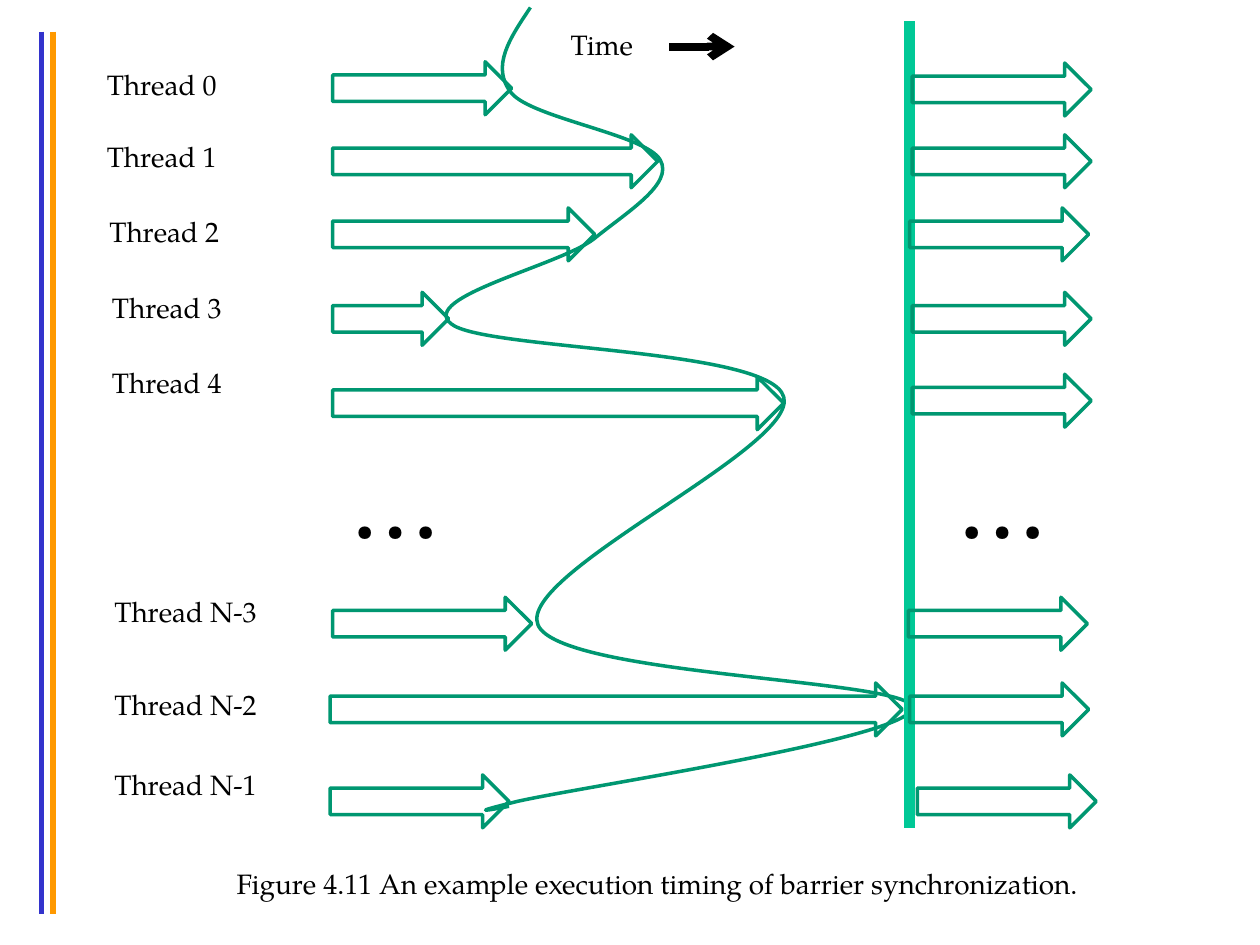
import dataclasses

import pptx
import pptx.dml.color
import pptx.enum.shapes
import pptx.enum.text
import pptx.oxml
import pptx.oxml.ns
import pptx.util
from pptx.util import Inches

FONT = "TeX Gyre Pagella"
GREEN = "009771"
BLACK = "000000"
ARROW_HEIGHT = 0.42
RESUME_WIDTH = 1.42
LABEL_HEIGHT = 0.4
UNITS_PER_INCH = 100

Point = tuple[float, float]


@dataclasses.dataclass
class Thread:
    name: str
    label_left: float
    label_top: float
    label_width: float
    work_left: float
    work_top: float
    work_width: float
    resume_left: float
    resume_top: float


@dataclasses.dataclass
class Line:
    start: Point
    end: Point
    color: str
    width: float
    arrowhead: bool = False


@dataclasses.dataclass
class Label:
    text: str
    left: float
    top: float
    width: float
    height: float = LABEL_HEIGHT
    size: float = 16


THREADS = [
    Thread("Thread 0", 0.75, 0.49, 1.11, 2.64, 0.49, 1.42, 7.24, 0.5),
    Thread("Thread 1", 0.75, 1.06, 1.11, 2.64, 1.07, 2.58, 7.24, 1.07),
    Thread("Thread 2", 0.77, 1.65, 1.11, 2.64, 1.65, 2.08, 7.22, 1.65),
    Thread("Thread 3", 0.79, 2.26, 1.11, 2.64, 2.32, 0.92, 7.24, 2.32),
    Thread("Thread 4", 0.79, 2.85, 1.11, 2.64, 2.99, 3.58, 7.24, 2.97),
    Thread("Thread N-3", 0.81, 4.67, 1.35, 2.64, 4.74, 1.58, 7.21, 4.74),
    Thread("Thread N-2", 0.81, 5.41, 1.35, 2.62, 5.42, 4.54, 7.22, 5.42),
    Thread("Thread N-1", 0.81, 6.04, 1.35, 2.62, 6.15, 1.42, 7.28, 6.15),
]

MARGIN_RULES = [
    Line((0.33, 0.25), (0.33, 7.25), "3333CC", 3),
    Line((0.42, 0.25), (0.42, 7.25), "FF9900", 3),
]
BARRIER = Line((7.22, 0.17), (7.22, 6.57), "00C896", 6)
TIME_ARROW = Line((5.31, 0.37), (5.83, 0.37), BLACK, 4.5, True)

LABELS = [
    Label("Time", 4.43, 0.17, 0.77),
    Label("…", 2.68, 3.4, 0.78, 1.11, 60),
    Label("…", 7.5, 3.4, 0.78, 1.11, 60),
    Label("Figure 4.11 An example execution timing of barrier synchronization.",
          1.78, 6.83, 7.07),
]

ARRIVAL_ORIGIN: Point = (3.54, 0.06)
ARRIVAL_SIZE: Point = (3.7, 6.37)
ARRIVAL_START: Point = (4.21, 0.06)
ARRIVAL_CURVES: list[tuple[Point, Point, Point]] = [
    ((4.05, 0.3), (3.89, 0.53), (4.06, 0.74)),
    ((4.23, 0.94), (5.13, 1.07), (5.24, 1.27)),
    ((5.35, 1.46), (4.98, 1.68), (4.71, 1.9)),
    ((4.43, 2.11), (3.32, 2.36), (3.58, 2.57)),
    ((3.83, 2.78), (6.11, 2.76), (6.22, 3.15)),
    ((6.34, 3.55), (4.1, 4.55), (4.27, 4.96)),
    ((4.44, 5.37), (7.26, 5.39), (7.24, 5.62)),
    ((7.21, 5.86), (4.64, 6.24), (4.11, 6.36)),
    ((3.58, 6.49), (4.04, 6.4), (4.04, 6.4)),
]


def rgb(color: str) -> pptx.dml.color.RGBColor:
    return pptx.dml.color.RGBColor.from_string(color)


def outline(shape, color: str, width: float) -> None:
    shape.line.color.rgb = rgb(color)
    shape.line.width = pptx.util.Pt(width)


def draw_line(slide, line: Line) -> None:
    connector = slide.shapes.add_connector(
        pptx.enum.shapes.MSO_CONNECTOR.STRAIGHT,
        *map(Inches, line.start + line.end))
    outline(connector, line.color, line.width)
    if line.arrowhead:
        head = pptx.oxml.parse_xml(
            f'<a:tailEnd {pptx.oxml.ns.nsdecls("a")} type="arrow"/>')
        connector.line._get_or_add_ln().append(head)
    connector._element.spPr.append(pptx.oxml.parse_xml(
        f'<a:effectLst {pptx.oxml.ns.nsdecls("a")}/>'))


def draw_block_arrow(slide, left: float, top: float, width: float) -> None:
    arrow = slide.shapes.add_shape(
        pptx.enum.shapes.MSO_SHAPE.RIGHT_ARROW,
        *map(Inches, (left, top, width, ARROW_HEIGHT)))
    arrow.fill.background()
    outline(arrow, GREEN, 2)
    arrow.shadow.inherit = False


def draw_label(slide, label: Label) -> None:
    box = slide.shapes.add_textbox(
        *map(Inches, (label.left, label.top, label.width, label.height)))
    frame = box.text_frame
    frame.word_wrap = False
    frame.auto_size = pptx.enum.text.MSO_AUTO_SIZE.SHAPE_TO_FIT_TEXT
    run = frame.paragraphs[0].add_run()
    run.text = label.text
    run.font.name = FONT
    run.font.size = pptx.util.Pt(label.size)
    run.font.color.rgb = rgb(BLACK)


def curve_element(points: tuple[Point, ...]):
    left, top = ARRIVAL_ORIGIN
    marks = "".join(
        f'<a:pt x="{round((x - left) * UNITS_PER_INCH)}"'
        f' y="{round((y - top) * UNITS_PER_INCH)}"/>' for x, y in points)
    tag = "cubicBezTo" if len(points) == 3 else "moveTo"
    return pptx.oxml.parse_xml(
        f'<a:{tag} {pptx.oxml.ns.nsdecls("a")}>{marks}</a:{tag}>')


def draw_arrival_curve(slide) -> None:
    builder = slide.shapes.build_freeform(
        *(round(value * UNITS_PER_INCH) for value in ARRIVAL_START),
        scale=Inches(1) / UNITS_PER_INCH)
    builder.add_line_segments(
        [(round(x * UNITS_PER_INCH), round(y * UNITS_PER_INCH))
         for _, _, (x, y) in ARRIVAL_CURVES], close=False)
    shape = builder.convert_to_shape()
    shape.left, shape.top = map(Inches, ARRIVAL_ORIGIN)
    shape.width, shape.height = map(Inches, ARRIVAL_SIZE)
    outline_path = shape._element.find(".//" + pptx.oxml.ns.qn("a:path"))
    for name, length in zip("wh", ARRIVAL_SIZE):
        outline_path.set(name, str(round(length * UNITS_PER_INCH)))
    outline_path[:] = map(curve_element, [(ARRIVAL_START,), *ARRIVAL_CURVES])
    shape.fill.background()
    outline(shape, GREEN, 2)
    shape.shadow.inherit = False


def main() -> None:
    presentation = pptx.Presentation()
    presentation.slide_width = Inches(10)
    presentation.slide_height = Inches(7.5)
    slide = presentation.slides.add_slide(presentation.slide_layouts[6])
    for rule in MARGIN_RULES:
        draw_line(slide, rule)
    for thread in THREADS:
        draw_block_arrow(slide, thread.work_left, thread.work_top, thread.work_width)
    draw_arrival_curve(slide)
    draw_line(slide, BARRIER)
    for thread in THREADS:
        draw_block_arrow(slide, thread.resume_left, thread.resume_top, RESUME_WIDTH)
        draw_label(slide, Label(thread.name, thread.label_left,
                                thread.label_top, thread.label_width))
    for label in LABELS:
        draw_label(slide, label)
    draw_line(slide, TIME_ARROW)
    presentation.save("out.pptx")


if __name__ == "__main__":
    main()
